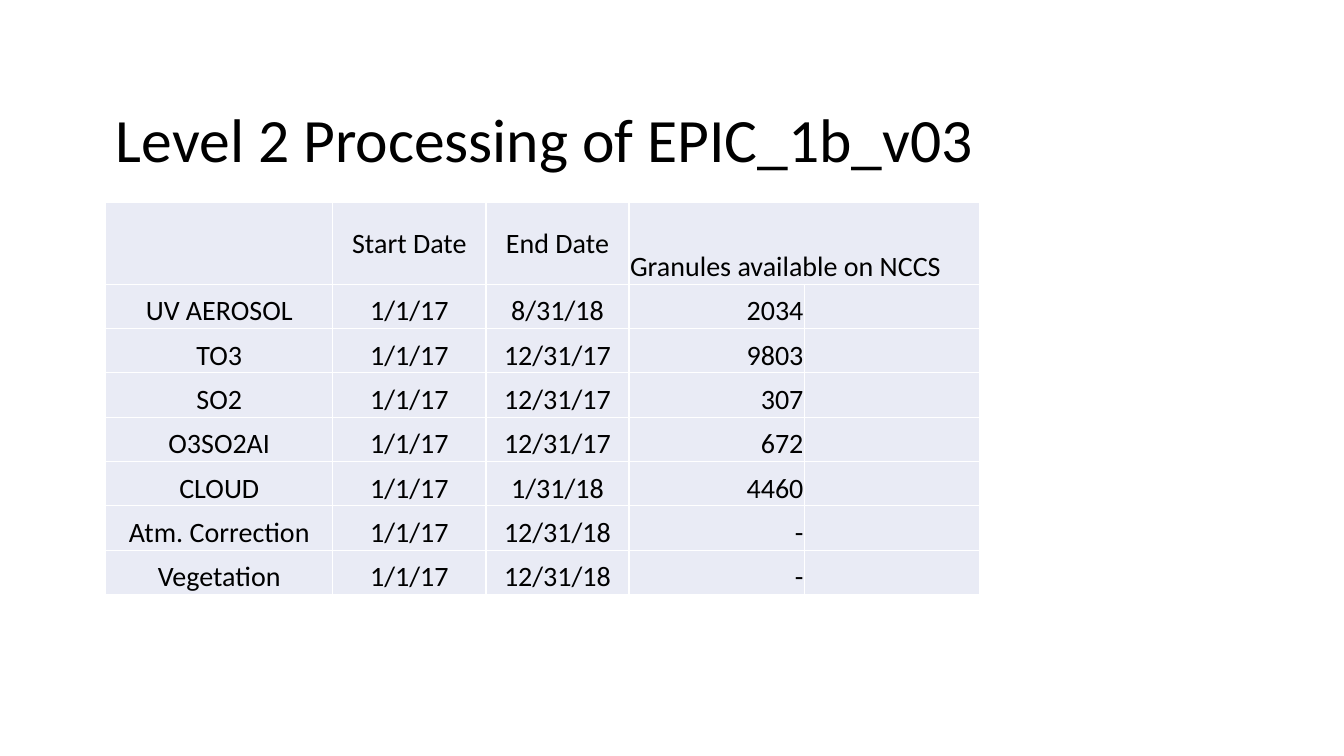
from lxml import etree
from pptx import Presentation
from pptx.dml.color import RGBColor
from pptx.enum.text import MSO_ANCHOR as Anchor, PP_ALIGN as Align
from pptx.oxml.ns import qn
from pptx.util import Inches, Pt

FONT = "Calibri"
COL_WIDTHS = [2.25, 1.52, 1.42, 1.74, 1.74]
HEADER_HEIGHT, ROW_HEIGHT = 0.81, 0.44
HEADERS = ["", "Start Date", "End Date", "Granules available on NCCS", ""]
PRODUCTS = [
    ("UV AEROSOL", "1/1/17", "8/31/18", "2034", ""),
    ("TO3", "1/1/17", "12/31/17", "9803", ""),
    ("SO2", "1/1/17", "12/31/17", "307", ""),
    ("O3SO2AI", "1/1/17", "12/31/17", "672", ""),
    ("CLOUD", "1/1/17", "1/31/18", "4460", ""),
    ("Atm. Correction", "1/1/17", "12/31/18", "-", ""),
    ("Vegetation", "1/1/17", "12/31/18", "-", ""),
]


def color(value):
    return RGBColor.from_string(value)


def format_text(tf, size, align):
    p = tf.paragraphs[0]
    p.alignment = align
    for r in p.runs:
        r.font.name = FONT
        r.font.size = Pt(size)
        r.font.bold = False
        r.font.color.rgb = color("000000")


def add_title(slide, text, left, top, width, height):
    sp = slide.shapes.title
    sp.left, sp.top = Inches(left), Inches(top)
    sp.width, sp.height = Inches(width), Inches(height)
    tf = sp.text_frame
    tf.text = text
    tf.vertical_anchor = Anchor.MIDDLE
    tf.paragraphs[0].line_spacing = 0.9
    format_text(tf, 44, Align.LEFT)


def set_borders(cell, value, width):
    tc_pr = cell._tc.get_or_add_tcPr()
    for i, side in enumerate(("lnL", "lnR", "lnT", "lnB")):
        ln = etree.Element(qn(f"a:{side}"), w=str(Pt(width)))
        fill = etree.SubElement(ln, qn("a:solidFill"))
        etree.SubElement(fill, qn("a:srgbClr"), val=value)
        tc_pr.insert(i, ln)  # borders come before the cell fill


def format_cell(cell, text, align, anchor):
    cell.text = text
    cell.margin_left = cell.margin_right = cell.margin_top = Inches(0.01)
    cell.margin_bottom = 0
    cell.vertical_anchor = anchor
    cell.fill.solid()
    cell.fill.fore_color.rgb = color("E9EBF5")
    set_borders(cell, "FFFFFF", 1)
    format_text(cell.text_frame, 20, align)


def add_product_table(slide, left, top):
    rows = [HEADERS, *PRODUCTS]
    heights = [HEADER_HEIGHT] + [ROW_HEIGHT] * len(PRODUCTS)
    table = slide.shapes.add_table(
        len(rows), len(COL_WIDTHS), Inches(left), Inches(top),
        Inches(sum(COL_WIDTHS)), Inches(sum(heights))).table
    table.first_row = table.horz_banding = False
    for col, width in zip(table.columns, COL_WIDTHS):
        col.width = Inches(width)
    for row, height in zip(table.rows, heights):
        row.height = Inches(height)

    # Dates are centred, counts right-aligned, the wide header left-aligned
    for i, values in enumerate(rows):
        for j, text in enumerate(values):
            header = i == 0
            if j < 3:
                align = Align.CENTER
            else:
                align = Align.LEFT if header else Align.RIGHT
            anchor = Anchor.MIDDLE if header and j < 3 else Anchor.BOTTOM
            format_cell(table.cell(i, j), text, align, anchor)
    table.cell(0, 3).merge(table.cell(0, 4))


def main():
    prs = Presentation()
    prs.slide_width, prs.slide_height = Inches(13.33), Inches(7.5)
    slide = prs.slides.add_slide(prs.slide_layouts[5])
    add_title(slide, "Level 2 Processing of EPIC_1b_v03", 1.05, 0.69, 11.5, 1.45)
    add_product_table(slide, 1.05, 2.01)
    prs.save("out.pptx")


if __name__ == "__main__":
    main()
